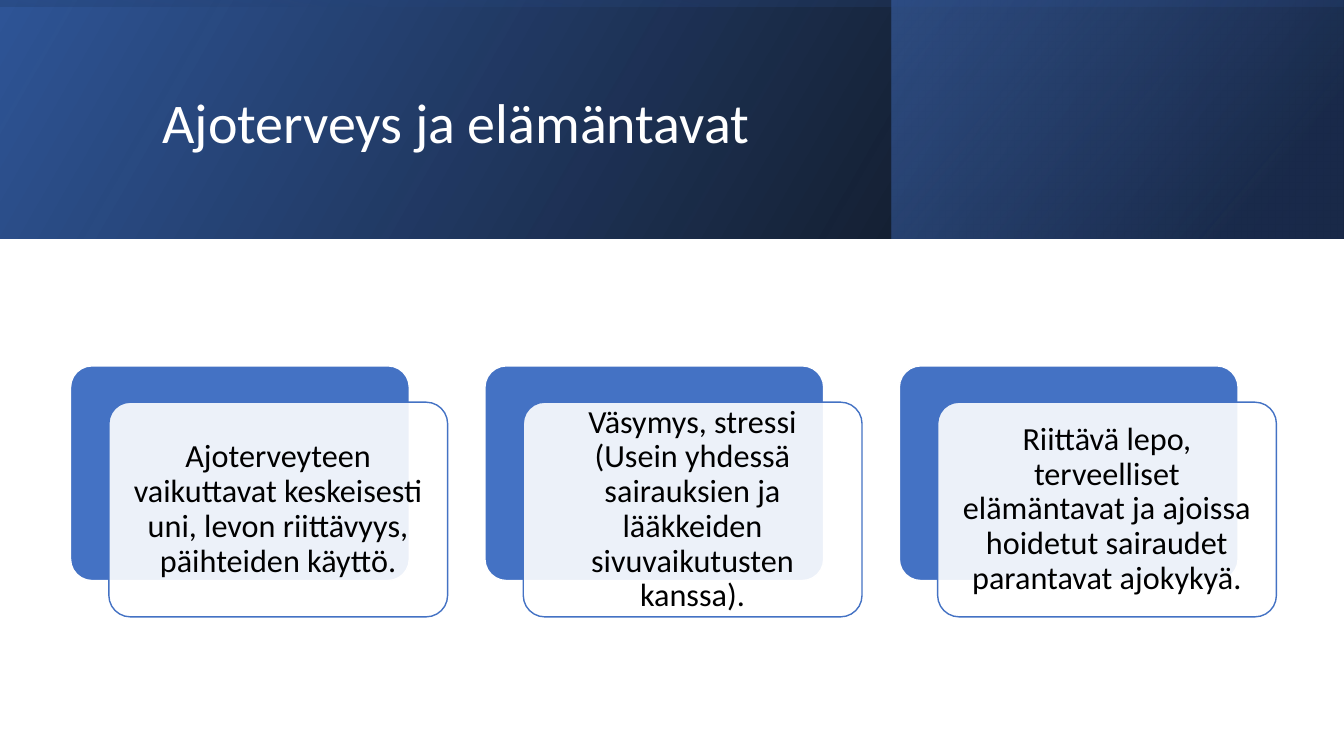
"""Build the slide on driving health and lifestyle."""
from pptx import Presentation
from pptx.dml.color import RGBColor
from pptx.enum.shapes import MSO_SHAPE
from pptx.enum.text import MSO_ANCHOR, PP_ALIGN
from pptx.oxml import parse_xml
from pptx.oxml.ns import nsdecls
from pptx.util import Inches, Pt

RECT, ROUND = MSO_SHAPE.RECTANGLE, MSO_SHAPE.ROUNDED_RECTANGLE
LEFT, CENTER = PP_ALIGN.LEFT, PP_ALIGN.CENTER
MIDDLE = MSO_ANCHOR.MIDDLE

TITLE = "Ajoterveys ja elämäntavat"
CARDS = [
    "Ajoterveyteen vaikuttavat keskeisesti uni, levon riittävyys, päihteiden käyttö.",
    "Väsymys, stressi (Usein yhdessä sairauksien ja lääkkeiden sivuvaikutusten kanssa).",
    "Riittävä lepo, terveelliset elämäntavat ja ajoissa hoidetut sairaudet parantavat ajokykyä.",
]
W, H, BAND_H = 13.33, 7.5, 2.37
SIDE_X, SIDE_W = 8.84, 4.48
BLUE, WHITE, BLACK = "4472C4", "FFFFFF", "000000"
BANDS = [
    ((0, 0, W, BAND_H), 0, 330, [(0, BLACK, 96), (100, "2F5597", 100)]),
    ((SIDE_X, 0, SIDE_W, BAND_H), 0, 320, [(19, "203864", 68), (100, BLUE, 48)]),
    (((W - BAND_H) / 2, (BAND_H - W) / 2, BAND_H, W), 270, 350,
     [(23, "2F5597", 16), (99, BLACK, 45)]),
]
CARD_X, CARD_Y, CARD_W, CARD_H = 0.7, 3.63, 3.36, 2.13
PITCH, SHIFT_X, SHIFT_Y = 4.11, 0.38, 0.36
CARD_INSET = 0.16


def rgb(color):
    return RGBColor.from_string(color)


def add_box(s, kind, box):
    sp = s.shapes.add_shape(kind, *map(Inches, box))
    sp.shadow.inherit = False
    return sp


def add_band(s, box, rotation, angle, stops):
    sp = add_box(s, RECT, box)
    sp.rotation = rotation
    sp.line.fill.background()
    spPr = sp._element.spPr
    spPr.get_or_add_xfrm().set("flipH", "1")
    gs = "".join(
        f'<a:gs pos="{pos * 1000}"><a:srgbClr val="{color}">'
        f'<a:alpha val="{alpha * 1000}"/></a:srgbClr></a:gs>'
        for pos, color, alpha in stops)
    spPr.prstGeom.addnext(parse_xml(
        f'<a:gradFill {nsdecls("a")}><a:gsLst>{gs}</a:gsLst>'
        f'<a:lin ang="{angle * 60000}" scaled="0"/></a:gradFill>'))


def add_card(s, x, y, fill, line, alpha=100):
    sp = add_box(s, ROUND, (x, y, CARD_W, CARD_H))
    sp.adjustments[0] = 0.1
    sp.fill.solid()
    sp.fill.fore_color.rgb = rgb(fill)
    if alpha < 100:
        color = sp._element.spPr.find(".//{*}solidFill/{*}srgbClr")
        color.append(parse_xml(f'<a:alpha {nsdecls("a")} val="{alpha * 1000}"/>'))
    sp.line.color.rgb = rgb(line)
    sp.line.width = Pt(1)
    return sp


def write(sp, text, size, color, align, inset=0.1):
    tf = sp.text_frame
    tf.word_wrap = True
    tf.vertical_anchor = MIDDLE
    tf.margin_left = tf.margin_right = tf.margin_top = tf.margin_bottom = Inches(inset)
    p = tf.paragraphs[0]
    p.alignment = align
    p.line_spacing = 0.9
    r = p.add_run()
    r.text = text
    r.font.name = "Calibri"
    r.font.size = Pt(size)
    r.font.color.rgb = rgb(color)


def main():
    prs = Presentation()
    prs.slide_width, prs.slide_height = Inches(W), Inches(H)
    s = prs.slides.add_slide(prs.slide_layouts[5])
    for band in BANDS:
        add_band(s, *band)

    title = s.shapes.title
    title.left, title.top, title.width, title.height = map(Inches, (1.51, 0.38, 10.63, 1.72))
    write(title, TITLE, 40, WHITE, LEFT)
    title._element.getparent().append(title._element)

    for i, text in enumerate(CARDS):
        x = CARD_X + i * PITCH
        add_card(s, x, CARD_Y, BLUE, WHITE)
        front = add_card(s, x + SHIFT_X, CARD_Y + SHIFT_Y, WHITE, BLUE, alpha=90)
        write(front, text, 23, BLACK, CENTER, CARD_INSET)
    prs.save("out.pptx")


if __name__ == "__main__":
    main()
